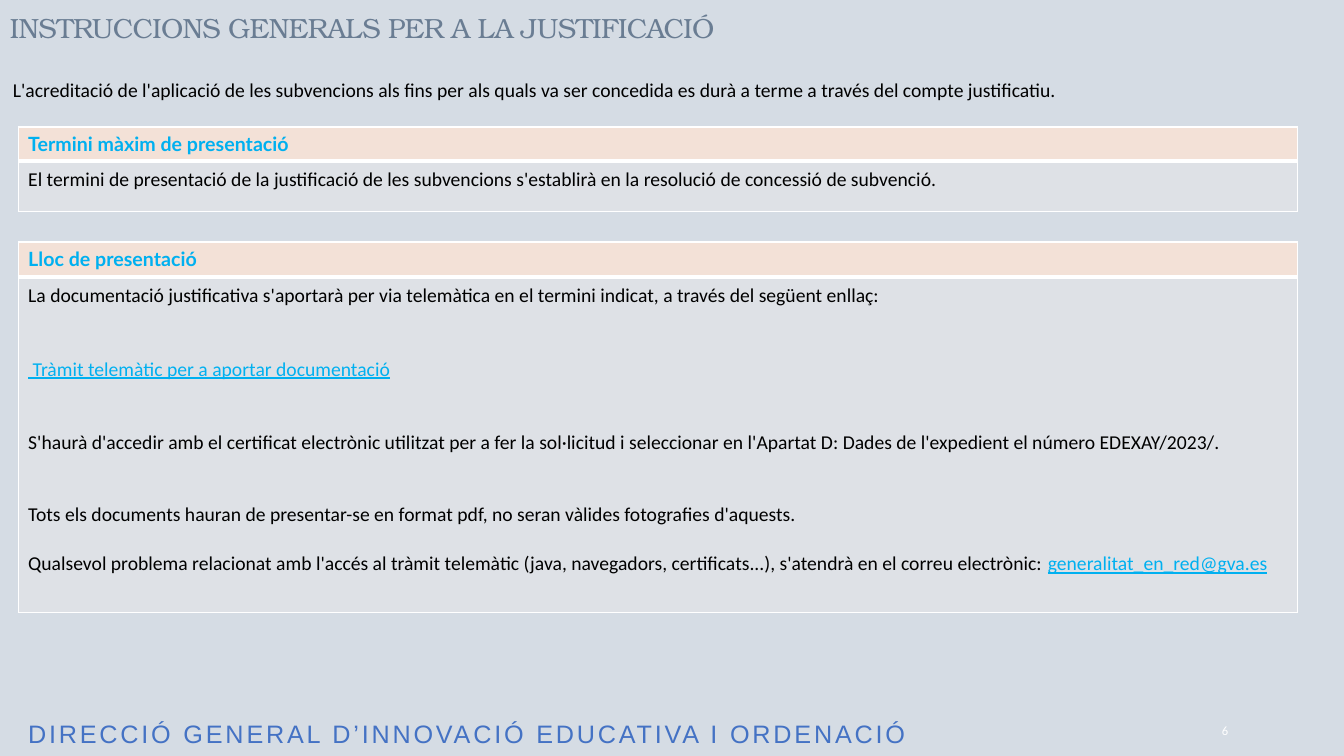
from lxml import etree
from pptx import Presentation
from pptx import util as u
from pptx.dml.color import RGBColor
from pptx.enum import text
from pptx.oxml.ns import qn

COLORS = {
    "background": "D5DCE4",
    "title": "6A7D93",
    "footer": "4472C4",
    "body": "000000",
    "accent": "00B0F0",
    "header_fill": "F3E1D7",
    "body_fill": "DEE1E6",
    "white": "FFFFFF",
}
TABLE_LEFT, TABLE_WIDTH = 0.18, 12.69


class SlideBuilder:
    """Holds the body style and the current slide."""

    font, size = "Calibri", 14

    def __init__(self, presentation):
        self.slide = presentation.slides.add_slide(presentation.slide_layouts[6])
        fill = self.slide.background.fill
        fill.solid()
        fill.fore_color.rgb = RGBColor.from_string(COLORS["background"])

    def run(self, paragraph, words, color="body", font=None, size=None,
            bold=False, underline=False, spacing=0):
        run = paragraph.add_run()
        run.text = words
        run.font.name = font or self.font
        run.font.size = u.Pt(size or self.size)
        run.font.bold = bold
        run.font.underline = underline
        run.font.color.rgb = RGBColor.from_string(COLORS[color])
        if spacing:
            run.font._element.set("spc", str(int(spacing * 100)))

    def justify(self, paragraph, before=0, after=8, line=1.07):
        paragraph.alignment = text.PP_ALIGN.JUSTIFY
        paragraph.line_spacing = line
        paragraph.space_before = u.Pt(before)
        paragraph.space_after = u.Pt(after)

    def text_box(self, left, top, width, height, words,
                 anchor=text.MSO_ANCHOR.TOP, line=1.0, **style):
        box = self.slide.shapes.add_textbox(
            u.Inches(left), u.Inches(top), u.Inches(width), u.Inches(height))
        frame = box.text_frame
        frame.word_wrap = True
        frame.vertical_anchor = anchor
        paragraph = frame.paragraphs[0]
        paragraph.line_spacing = line
        self.run(paragraph, words, **style)
        return paragraph

    def style_cell(self, cell, fill, bottom_width):
        properties = cell._tc.get_or_add_tcPr()
        for side, width in (("L", 1), ("R", 1), ("T", 1), ("B", bottom_width)):
            border = etree.SubElement(properties, qn(f"a:ln{side}"), w=str(u.Pt(width)))
            solid = etree.SubElement(border, qn("a:solidFill"))
            etree.SubElement(solid, qn("a:srgbClr"), val=COLORS["white"])
        cell.fill.solid()
        cell.fill.fore_color.rgb = RGBColor.from_string(COLORS[fill])

    def section_table(self, top, heights, heading, paragraphs):
        """One header row over one body row; paragraphs are (spacing, runs)."""
        table = self.slide.shapes.add_table(
            2, 1, u.Inches(TABLE_LEFT), u.Inches(top),
            u.Inches(TABLE_WIDTH), u.Inches(sum(heights))).table
        table.first_row = table.horz_banding = False
        for row, height in zip(table.rows, heights):
            row.height = u.Inches(height)
        header, body = table.cell(0, 0), table.cell(1, 0)
        self.style_cell(header, "header_fill", 3)
        self.style_cell(body, "body_fill", 1)
        self.run(header.text_frame.paragraphs[0], heading, "accent", "Lato", bold=True)
        frame = body.text_frame
        for index, (spacing, runs) in enumerate(paragraphs):
            paragraph = frame.add_paragraph() if index else frame.paragraphs[0]
            self.justify(paragraph, **spacing)
            for words, is_link in runs:
                self.run(paragraph, words, "accent" if is_link else "body",
                         underline=is_link)


def main():
    presentation = Presentation()
    presentation.slide_width = u.Inches(13.33)
    presentation.slide_height = u.Inches(7.5)
    builder = SlideBuilder(presentation)

    # Title and introduction
    builder.text_box(0, -0.03, 9.43, 0.52, "INSTRUCCIONS GENERALS PER A LA JUSTIFICACIÓ",
                     anchor=text.MSO_ANCHOR.BOTTOM, line=0.9, color="title",
                     font="TeX Gyre Bonum", size=19.8, spacing=-0.5)
    introduction = builder.text_box(
        0.03, 0.71, 12.69, 0.34,
        "L'acreditació de l'aplicació de les subvencions als fins per als quals "
        "va ser concedida es durà a terme a través del compte justificatiu.")
    builder.justify(introduction)

    # Deadline
    builder.section_table(1.26, (0.34, 0.5), "Termini màxim de presentació", [
        ({}, [("El termini de presentació de la justificació de les subvencions "
               "s'establirà en la resolució de concessió de subvenció.", False)]),
    ])

    # Place of submission
    wide_gap = {"before": 26.3}
    builder.section_table(2.4, (0.35, 3.33), "Lloc de presentació", [
        ({}, [("La documentació justificativa s'aportarà per via telemàtica en el "
               "termini indicat, a través del següent enllaç:", False)]),
        (wide_gap, [(" Tràmit telemàtic per a aportar documentació", True)]),
        (wide_gap, [("S'haurà d'accedir amb el certificat electrònic utilitzat per a fer "
                     "la sol·licitud i seleccionar en l'Apartat D: Dades de l'expedient "
                     "el número EDEXAY/2023/.", False)]),
        ({"before": 26.3, "after": 0, "line": 1.0},
         [("Tots els documents hauran de presentar-se en format pdf, no seran "
           "vàlides fotografies d'aquests.", False)]),
        ({"before": 17},
         [("Qualsevol problema relacionat amb l'accés al tràmit telemàtic (java, "
           "navegadors, certificats...), s'atendrà en el correu electrònic: ", False),
          ("generalitat_en_red@gva.es", True)]),
    ])

    # Footer and slide number
    builder.text_box(TABLE_LEFT, 7.05, 9.59, 0.41,
                     "DIRECCIÓ GENERAL D’INNOVACIÓ EDUCATIVA I ORDENACIÓ",
                     line=1.1, color="footer", font="Arial", size=18, spacing=2)
    number = builder.text_box(11.9, 7.1, 0.5, 0.3, "6", color="white", size=9,
                              anchor=text.MSO_ANCHOR.MIDDLE)
    number.alignment = text.PP_ALIGN.CENTER

    presentation.save("out.pptx")


if __name__ == "__main__":
    main()
